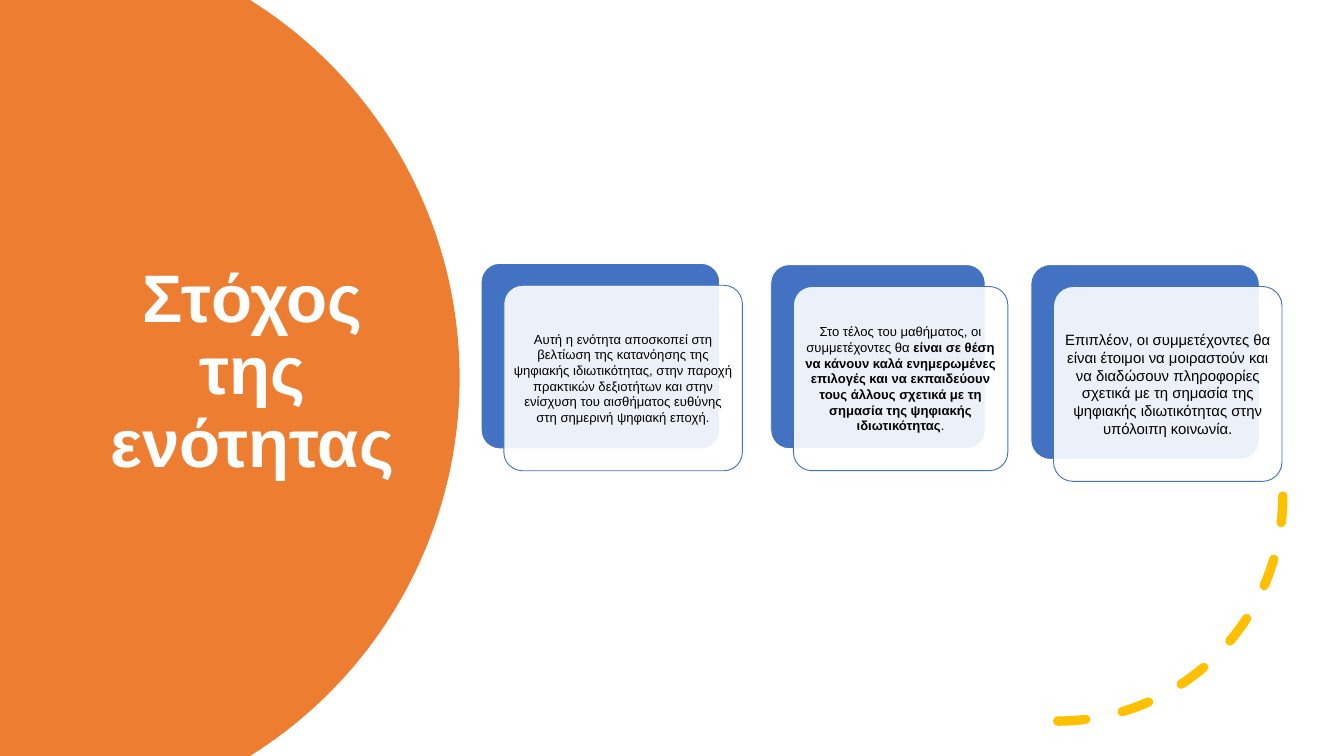
import math
from dataclasses import dataclass

import pptx
import pptx.dml.color
import pptx.enum.shapes
import pptx.enum.text
import pptx.oxml
import pptx.oxml.ns
import pptx.util

Pt = pptx.util.Pt
Shapes = pptx.enum.shapes.MSO_SHAPE

COLOURS = {
    "orange": "ED7D31",
    "blue": "4372C3",
    "yellow": "FFC000",
    "white": "FFFFFF",
    "black": "000000",
}
SLIDE_WIDTH, SLIDE_HEIGHT = 1440, 810
CARD_SHIFT = (24.3, 23.5)
TEXT_INSET = 5.8


@dataclass
class Run:
    text: str
    bold: bool = False


@dataclass
class Card:
    left: float
    top: float
    width: float
    height: float
    size: float
    margin: float
    runs: list[Run]


CARDS = [
    Card(515.5, 282.2, 255.6, 198.7, 14, 4.3, [
        Run("Αυτή η ενότητα αποσκοπεί στη βελτίωση της κατανόησης της "
            "ψηφιακής ιδιωτικότητας, στην παροχή πρακτικών δεξιοτήτων και "
            "στην ενίσχυση του αισθήματος ευθύνης στη σημερινή ψηφιακή εποχή."),
    ]),
    Card(825.8, 283.5, 229.7, 197.3, 14, 4.3, [
        Run("Στο τέλος του μαθήματος, οι συμμετέχοντες θα "),
        Run("είναι σε θέση να κάνουν καλά ενημερωμένες επιλογές και να "
            "εκπαιδεύουν τους άλλους σχετικά με τη σημασία της ψηφιακής "
            "ιδιωτικότητας", bold=True),
        Run("."),
    ]),
    Card(1104.5, 283.5, 244.8, 208.8, 16, 5, [
        Run("Επιπλέον, οι συμμετέχοντες θα είναι έτοιμοι να μοιραστούν και να "
            "διαδώσουν πληροφορίες σχετικά με τη σημασία της ψηφιακής "
            "ιδιωτικότητας στην υπόλοιπη κοινωνία."),
    ]),
]


def colour(name: str) -> pptx.dml.color.RGBColor:
    return pptx.dml.color.RGBColor.from_string(COLOURS[name])


def set_attributes(target, values: dict) -> None:
    for name, value in values.items():
        setattr(target, name, value)


def add_text(page, bounds: tuple, runs: list[Run], size: float, ink: str,
             margins: tuple, spacing: float = 1.0) -> None:
    """Add a centred text box; margins are horizontal, then vertical."""
    box = page.shapes.add_textbox(*map(Pt, bounds))
    across, down = map(Pt, margins)
    set_attributes(box.text_frame, {
        "word_wrap": True,
        "vertical_anchor": pptx.enum.text.MSO_ANCHOR.MIDDLE,
        "margin_left": across, "margin_right": across,
        "margin_top": down, "margin_bottom": down,
    })
    para = box.text_frame.paragraphs[0]
    set_attributes(para, {
        "alignment": pptx.enum.text.PP_ALIGN.CENTER,
        "line_spacing": spacing,
    })
    for run in runs:
        span = para.add_run()
        span.text = run.text
        set_attributes(span.font, {"name": "Arial", "size": Pt(size), "bold": run.bold})
        span.font.color.rgb = colour(ink)


def add_panel(page, bounds: tuple, fill: str, line: str, opacity: int = 100) -> None:
    panel = page.shapes.add_shape(Shapes.ROUNDED_RECTANGLE, *map(Pt, bounds))
    panel.shadow.inherit = False
    panel.adjustments[0] = 0.1
    panel.fill.solid()
    panel.fill.fore_color.rgb = colour(fill)
    panel.line.color.rgb = colour(line)
    panel.line.width = Pt(1)
    if opacity < 100:
        tint = panel.fill._xPr.find(".//" + pptx.oxml.ns.qn("a:srgbClr"))
        alpha = pptx.oxml.parse_xml(
            f'<a:alpha {pptx.oxml.ns.nsdecls("a")} val="{opacity * 1000}"/>')
        tint.append(alpha)


def add_card(page, card: Card) -> None:
    left, top = card.left + CARD_SHIFT[0], card.top + CARD_SHIFT[1]
    add_panel(page, (card.left, card.top, card.width, card.height), "blue", "white")
    add_panel(page, (left, top, card.width, card.height), "white", "blue", opacity=90)
    bounds = (left + TEXT_INSET, top + TEXT_INSET,
              card.width - 2 * TEXT_INSET, card.height - 2 * TEXT_INSET)
    add_text(page, bounds, card.runs, card.size, "black", (card.margin, card.margin))


def add_disc(page, centre_x: float = 15.1, radius: float = 477.4, steps: int = 90) -> None:
    """Add the disc that is cut by the left, top and bottom slide edges."""
    middle = SLIDE_HEIGHT / 2
    reach = math.asin(middle / radius)
    angles = [reach * (2 * step / steps - 1) for step in range(steps + 1)]
    rim = [(Pt(centre_x + radius * math.cos(angle)), Pt(middle + radius * math.sin(angle)))
           for angle in angles]
    builder = page.shapes.build_freeform(0, 0)
    builder.add_line_segments(rim + [(0, Pt(SLIDE_HEIGHT))], close=True)
    disc = builder.convert_to_shape()
    disc.shadow.inherit = False
    disc.fill.solid()
    disc.fill.fore_color.rgb = colour("orange")
    disc.line.fill.background()


def add_dashed_arc(page) -> None:
    arc = page.shapes.add_shape(Shapes.ARC, Pt(892.1), Pt(290.2), Pt(482.4), Pt(482.4))
    arc.shadow.inherit = False
    arc.rotation = 180
    arc._element.spPr.xfrm.set("flipH", "1")
    arc.fill.background()
    arc.line.color.rgb = colour("yellow")
    set_attributes(arc.line, {
        "width": Pt(10),
        "dash_style": pptx.enum.dml.MSO_LINE.DASH,
    })
    arc.line._ln.set("cap", "rnd")


def main() -> None:
    deck = pptx.Presentation()
    set_attributes(deck, {"slide_width": Pt(SLIDE_WIDTH), "slide_height": Pt(SLIDE_HEIGHT)})
    page = deck.slides.add_slide(deck.slide_layouts[6])
    add_disc(page)
    add_text(page, (81.4, 136, 378, 527), [Run("Στόχος της ενότητας", bold=True)],
             72, "white", (7.2, 3.6), spacing=0.9)
    add_dashed_arc(page)
    for card in CARDS:
        add_card(page, card)
    deck.save("out.pptx")


if __name__ == "__main__":
    main()
